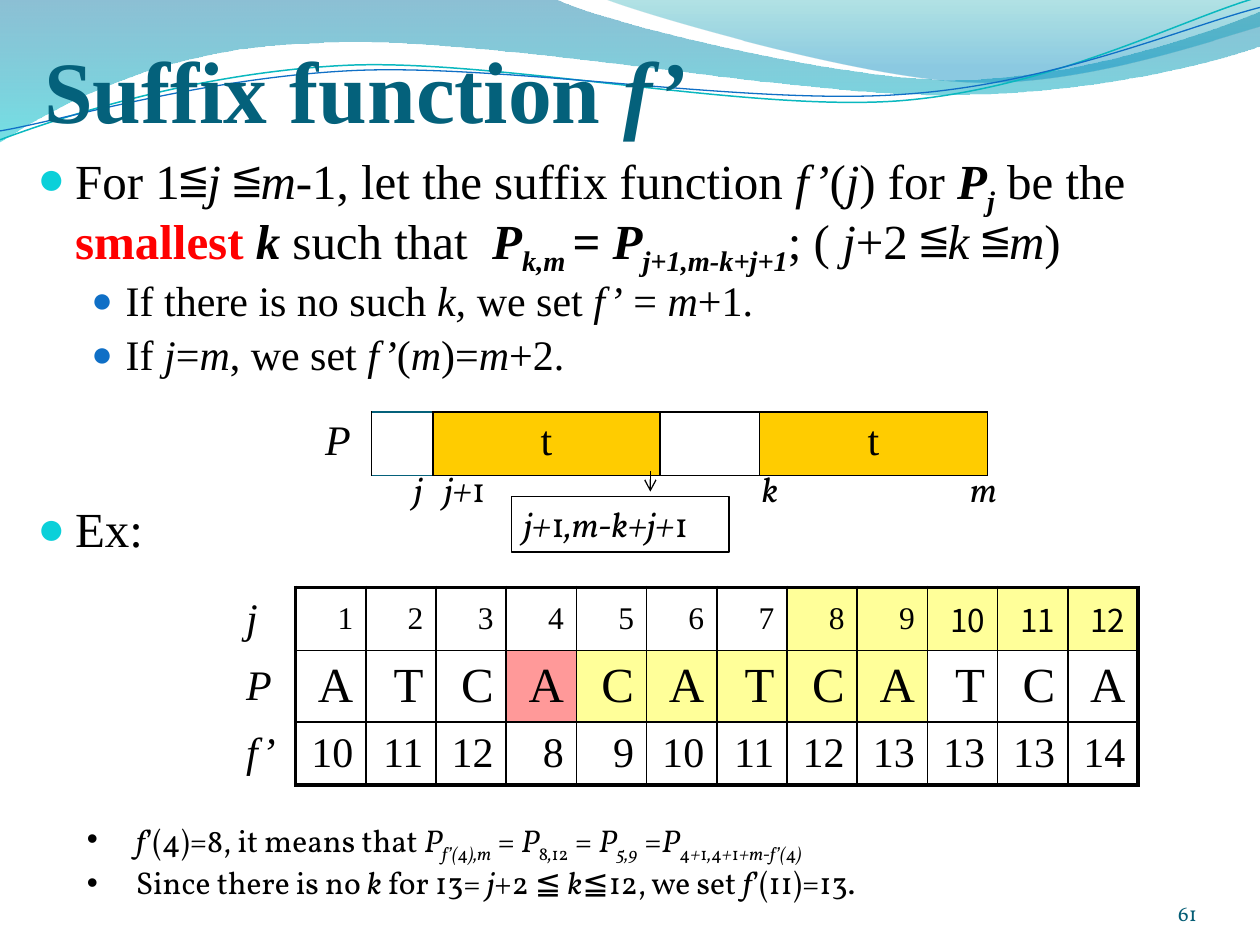
from itertools import groupby

from lxml.etree import SubElement as Sub
from pptx import Presentation
from pptx.dml.color import RGBColor as Rgb
from pptx.enum.shapes import MSO_CONNECTOR as Link, MSO_SHAPE as Form
from pptx.enum.text import MSO_ANCHOR as Anchor, MSO_AUTO_SIZE as Fit, PP_ALIGN as Align
from pptx.oxml.ns import qn
from pptx.util import Cm, Pt

BLACK = Rgb(0, 0, 0)
RED = Rgb(0xFF, 0, 0)
TEAL = Rgb(0x04, 0x61, 0x7B)
PAGE = Rgb(0x04, 0x5D, 0x75)
AQUA = Rgb(0x0B, 0xD0, 0xD9)
BLUE = Rgb(0x0F, 0x6F, 0xC6)
CYAN = Rgb(0x0A, 0xB8, 0xBF)
GOLD = Rgb(0xFF, 0xCC, 0)
PINK = Rgb(0xFF, 0x99, 0x99)
LEMON = Rgb(0xFF, 0xFF, 0x99)
WHITE = Rgb(0xFF, 0xFF, 0xFF)
TIMES, VOLL, NOTO = "Times New Roman", "Vollkorn", "Noto Sans CJK TC"
MARKS = "_*~^"

BANDS = [
    ([(0, 0), (11.18, -0.03), (12.09, 0.43, 16.87, 1.6, 19.25, 1.6),
      (21.67, 1.6, 24.33, 0.66, 25.4, 0.23), (25.43, 0.91),
      (24.97, 1.12, 22.1, 1.93, 18.95, 1.91), (15.8, 1.91, 9.7, 0.71, 6.53, 0.86),
      (3.28, 0.91, 1.17, 2.11, -0.03, 2.87)],
     [(0, Rgb(0, 0x74, 0xA1), 45), (1, Rgb(0, 0xC6, 0xCF), 55)]),
    ([(12.17, -0.03), (12.93, 0.28, 17.32, 1.57, 19.53, 1.65),
      (21.74, 1.75, 24.41, 0.81, 25.4, 0.53), (25.4, 0)],
     [(0, Rgb(0, 0xA1, 0xA9), 30), (0.8, Rgb(0, 0x8B, 0xBF), 45)]),
]
LINES = [
    ([(-0.05, 2.22), (1.19, 1.82, 4.02, 1.04, 7.05, 1.05),
      (10.05, 1.07, 15.02, 2.37, 18.08, 2.29),
      (21.13, 2.2, 23.86, 0.91, 25.4, 0.55)], CYAN, 0.85),
    ([(-0.04, 2.04), (1.16, 1.9, 4.17, 1.15, 7.2, 1.16),
      (10.25, 1.18, 15.13, 2.25, 18.19, 2.16),
      (21.22, 2.1, 23.93, 1.06, 25.45, 0.75)], BLUE, 0.75),
]
POINTS = [
    (0, "For 1≦_j_ ≦_m_-1, let the suffix function _f’_(_j_) for _*P~j~_* be the "
        "*^smallest ^_k*_ such that  _*P~k,m ~_= _P~j+1,m-k+j+1~*_; ( _j_+2 ≦_k_ ≦_m_)", 7),
    (1, "If there is no such _k, _we set _f’_ = _m_+1.", 4.8),
    (1, "If _j_=_m_, we set _f’_(_m_)=_m_+2.", 4.8),
    (0, "Ex:", 72),
]
NOTES = [
    "_f_’(4)=8, it means that _P~f’(_4_),m~_ = _P_~8_,_12~ = _P~5,9_~ =_P_~4_+_1_,_4_+_1_+m-f’(_4_)_~",
    "Since there is no _k_ for 13= _j_+2 ≦ _k_≦12, we set _f_’(11)=13.",
]
ROWS = [
    ("_j_", range(1, 13), 18, 1.27, range(8, 13)),
    ("_P_", "ATCACATCATCA", 28, 1.42, range(5, 10)),
    ("_f’_", (10, 11, 12, 8, 9, 10, 11, 12, 13, 13, 13, 14), 24, 1.27, ()),
]


def write(para, text, size, face=TIMES, hue=BLACK, align=Align.LEFT):
    """Fill a paragraph; marks toggle italic _, bold *, subscript ~ and red ^."""
    para.alignment = align
    font = para.font
    font.size, font.name, font.color.rgb = Pt(size), face, hue
    live = set()
    for mark, part in groupby(text, lambda c: c in MARKS):
        if mark:
            live ^= set(part)
            continue
        run = para.add_run()
        run.text = "".join(part)
        if "_" in live:
            run.font.italic = True
        if "*" in live:
            run.font.bold = True
        if "^" in live:
            run.font.color.rgb = RED
        if "~" in live:
            run._r.get_or_add_rPr().set("baseline", "-25000")


def bullet(para, sign, left, hang, gap, hue=None, scale=100):
    """Give a paragraph its bullet, indent and spacing."""
    para.line_spacing, para.space_before = 0.9, Pt(gap)
    props = para._p.get_or_add_pPr()
    props.set("marL", str(Cm(left)))
    props.set("indent", str(-Cm(hang)))
    if hue is not None:
        Sub(Sub(props, qn("a:buClr")), qn("a:srgbClr"), val=str(hue))
    Sub(props, qn("a:buSzPct"), val=str(scale * 1000))
    Sub(props, qn("a:buFont"), typeface="Arial")
    Sub(props, qn("a:buChar"), char=sign)


def place(slide, shape, box):
    """Move a placeholder to its box, in front, and return its text frame."""
    shape.left, shape.top, shape.width, shape.height = map(Cm, box)
    slide.shapes.element.append(shape.element)
    frame = shape.text_frame
    frame.auto_size, frame.word_wrap = Fit.NONE, True
    return frame


def label(slide, box, text, size=20, hue=BLACK, align=Align.LEFT):
    """Add a one-line text box and return its text frame."""
    frame = slide.shapes.add_textbox(*map(Cm, box)).text_frame
    frame.word_wrap = True
    write(frame.paragraphs[0], text, size, VOLL, hue, align)
    return frame


def trace(slide, steps, box, closed):
    """Draw an outline of straight and cubic steps from the corner of a box."""
    steps = [[Cm(box[i % 2] + n) for i, n in enumerate(step)] for step in steps]
    pen = slide.shapes.build_freeform(*steps[0])
    pen.add_line_segments([step[-2:] for step in steps[1:]], close=closed)
    shape = pen.convert_to_shape()
    shape.shadow.inherit = False
    nodes = list(shape.element.iter(qn("a:lnTo")))
    for node, step in zip(nodes, steps[1:]):
        if len(step) == 6:
            node.tag = qn("a:cubicBezTo")
            for x, y in (step[4:], step[:2], step[2:4]):
                Sub(node, qn("a:pt"), x=str(x - shape.left), y=str(y - shape.top))
            node.remove(node[0])
            node.append(node[0])
    return shape


def waves(slide, box):
    """Draw the bands and thin lines across the top."""
    for steps, stops in BANDS:
        shape = trace(slide, steps, box, True)
        shape.line.fill.background()
        shape.fill.gradient()
        shape.fill.gradient_angle = 270
        for stop, (spot, hue, _) in zip(shape.fill.gradient_stops, stops):
            stop.position, stop.color.rgb = spot, hue
        for node, (_, _, alpha) in zip(shape.element.iter(qn("a:srgbClr")), stops):
            Sub(node, qn("a:alpha"), val=str(alpha * 1000))
    for steps, hue, width in LINES:
        shape = trace(slide, steps, box, False)
        shape.rotation = 357.3
        shape.fill.background()
        shape.line.color.rgb, shape.line.width = hue, Pt(width)


def heading(slide, box):
    """Set the title."""
    frame = place(slide, slide.shapes.title, box)
    frame.vertical_anchor = Anchor.BOTTOM
    frame.margin_left = frame.margin_right = frame.margin_bottom = 0
    write(frame.paragraphs[0], "*Suffix function_ f’_*", 50, hue=TEAL)


def points(slide, box):
    """Set the main list."""
    frame = place(slide, slide.placeholders[1], box)
    for i, (level, text, gap) in enumerate(POINTS):
        para = frame.add_paragraph() if i else frame.paragraphs[0]
        para.level = level
        write(para, text, (28, 24)[level])
        bullet(para, "●", *((0.76, 0.76), (1.78, 0.69))[level], gap,
               (AQUA, BLUE)[level], (95, 85)[level])


def grid(slide, box, cols, rows):
    """Add a bare table with the given column widths and row heights."""
    table = slide.shapes.add_table(len(rows), len(cols), *map(Cm, box)).table
    table.first_row = table.horz_banding = False
    for col, width in zip(table.columns, cols):
        col.width = Cm(width)
    for row, height in zip(table.rows, rows):
        row.height = Cm(height)
    return table


def dress(cell, edges, fill=None, hues=(BLACK,) * 4):
    """Set a cell's left, right, top and bottom edges, then its fill."""
    props = cell._tc.get_or_add_tcPr()
    for side, width, hue in zip("LRTB", edges, hues):
        edge = Sub(props, qn("a:ln" + side), w=str(Pt(width)))
        if width:
            Sub(Sub(edge, qn("a:solidFill")), qn("a:srgbClr"), val=str(hue))
        else:
            Sub(edge, qn("a:noFill"))
    if fill is None:
        cell.fill.background()
    else:
        cell.fill.solid()
        cell.fill.fore_color.rgb = fill


def pattern(slide, box):
    """Draw the bar for P with its index labels."""
    left, top = box[:2]
    table = grid(slide, box, (1.19, 1.24, 4.57, 2.01, 4.6), box[3:])
    for i, (text, fill) in enumerate((("_P_", None), ("", None), ("t", GOLD),
                                      ("", WHITE), ("t", GOLD))):
        cell = table.cell(0, i)
        hues = (BLACK, BLACK, TEAL, TEAL) if i == 1 else (BLACK,) * 4
        dress(cell, (1,) * 4 if i else (0, 1, 0, 0), fill, hues)
        write(cell.text_frame.paragraphs[0], text, 24,
              align=Align.CENTER if i else Align.LEFT)
    for x, width, text in ((2.41, 1.6, "_j+_1"), (8.81, 1, "_k_"),
                           (13, 1, "_m_"), (1.8, 1.2, "_j_")):
        label(slide, (left + x, top + 0.99, width, 1.09), text)
    note = slide.shapes.add_shape(Form.RECTANGLE, *map(Cm, (left + 4.01, top + 1.7, 4.39, 1.12)))
    note.shadow.inherit = False
    note.fill.background()
    note.line.color.rgb, note.line.width = BLACK, Pt(0.75)
    note.text_frame.vertical_anchor = Anchor.TOP
    write(note.text_frame.paragraphs[0], "_j+_1_,m-k+j+_1", 20, VOLL)
    x = Cm(left + 6.81)
    arrow = slide.shapes.add_connector(Link.STRAIGHT, x, Cm(top + 1.6), x, Cm(top + 1.19))
    arrow.line.color.rgb, arrow.line.width = BLACK, Pt(0.75)
    Sub(arrow.line._get_or_add_ln(), qn("a:headEnd"), type="arrow")
    Sub(arrow.element.spPr, qn("a:effectLst"))


def sample(slide, box):
    """Fill the worked table of j, P and f’."""
    first, count = 1.25, 12
    table = grid(slide, box, [first] + [(box[2] - first) / count] * count,
                 [row[3] for row in ROWS])
    for r, (head, items, size, _, lit) in enumerate(ROWS):
        for c, item in enumerate([head, *items]):
            cell = table.cell(r, c)
            cell.vertical_anchor = Anchor.MIDDLE
            fill = LEMON if c in lit else PINK if (r, c) == (1, 4) else None
            edges = [2.25 if end else 1 for end in (c == 1, c == count, r == 0, r == 2)]
            dress(cell, edges if c else (0, 2.25, 0, 0), fill)
            write(cell.text_frame.paragraphs[0], str(item), size if c else 24,
                  NOTO if r == 0 and c > 9 else TIMES,
                  align=Align.RIGHT if c else Align.LEFT)


def remarks(slide, box):
    """Set the closing remarks."""
    frame = label(slide, box, NOTES[0], 18)
    write(frame.add_paragraph(), NOTES[1], 18, VOLL)
    for para in frame.paragraphs:
        bullet(para, "•", 0.99, 0.99, 4.5)


def number(slide, box):
    """Set the page number."""
    frame = label(slide, box, "61", 12, PAGE, Align.RIGHT)
    frame.vertical_anchor = Anchor.BOTTOM
    frame.margin_left = frame.margin_right = frame.margin_top = frame.margin_bottom = 0


def main():
    """Build and save the slide."""
    deck = Presentation()
    deck.slide_width, deck.slide_height = Cm(25.4), Cm(19.05)
    slide = deck.slides.add_slide(deck.slide_layouts[1])
    waves(slide, (0, 0, 25.4, 2.9))
    heading(slide, (0.89, 0.53, 22.86, 2.31))
    points(slide, (0.5, 2.92, 24.89, 8.99))
    number(slide, (22.02, 17.65, 2.11, 1.02))
    pattern(slide, (6.3, 8.31, 13.62, 1.23))
    sample(slide, (4.71, 11.84, 18.24, 3.96))
    remarks(slide, (1.5, 16.43, 22.81, 2.29))
    deck.save("out.pptx")


if __name__ == "__main__":
    main()
